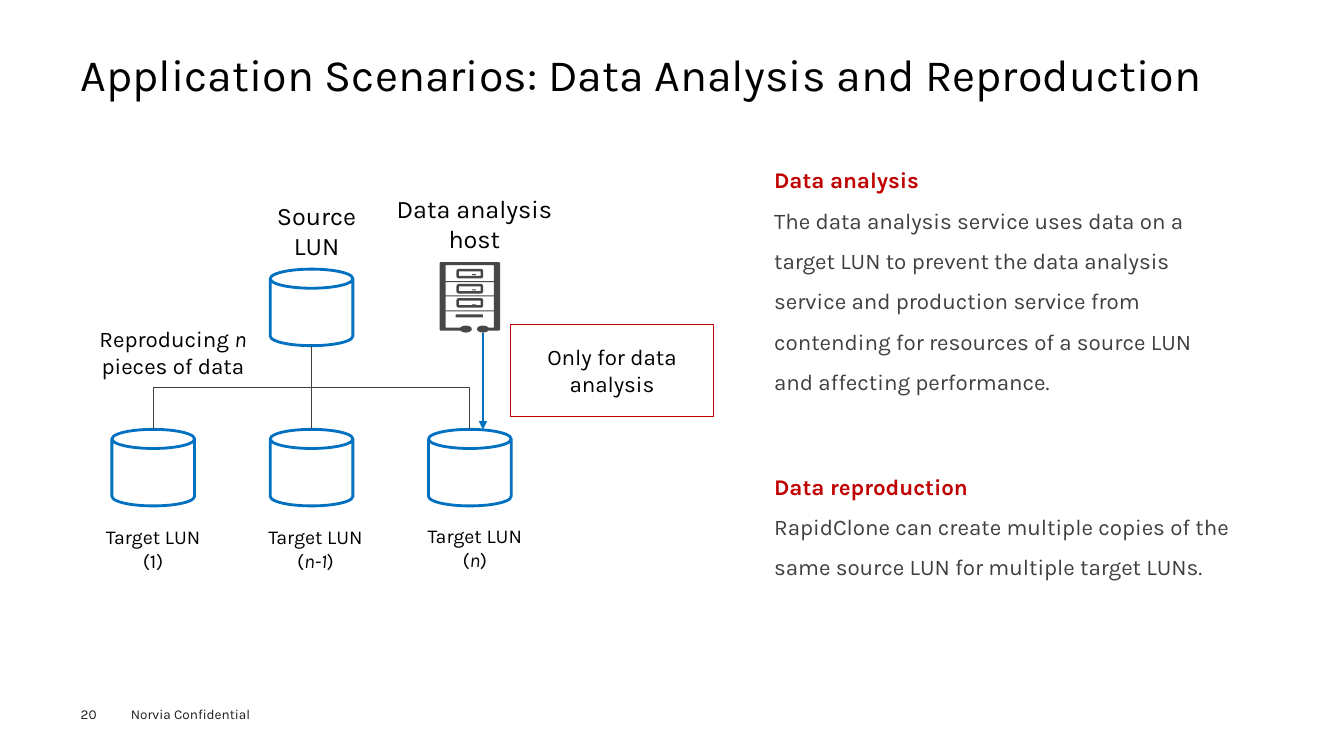
from lxml.etree import SubElement
from pptx import Presentation
from pptx.dml.color import RGBColor
from pptx.enum.shapes import MSO_CONNECTOR, MSO_SHAPE
from pptx.enum.text import MSO_ANCHOR, MSO_AUTO_SIZE, PP_ALIGN
from pptx.oxml.ns import qn
from pptx.util import Emu, Pt

SCALE = 9144  # EMU in one px, 100 px to the inch
COLORS = {
    "black": "000000", "white": "FFFFFF", "blue": "0070C0", "red": "C00000",
    "body": "3D3F43", "icon": "474747", "tree": "404040", "footer": "1D1D1B",
}


def px(length):
    return Emu(length * SCALE)


def color(name):
    return RGBColor.from_string(COLORS[name])


class SlideBuilder:
    font_name = "Karla"

    def __init__(self, slide):
        self.slide = slide

    def fill_text(self, shape, paragraphs, margins=None, anchor=MSO_ANCHOR.TOP,
                  align=PP_ALIGN.LEFT, spacing=None):
        """Each paragraph is a list of (text, font format) runs."""
        frame = shape.text_frame
        settings = {"word_wrap": True, "auto_size": MSO_AUTO_SIZE.NONE,
                    "vertical_anchor": anchor}
        if margins is not None:
            for side in ("left", "top", "right", "bottom"):
                settings[f"margin_{side}"] = px(margins)
        for name, value in settings.items():
            setattr(frame, name, value)
        for index, runs in enumerate(paragraphs):
            paragraph = frame.add_paragraph() if index else frame.paragraphs[0]
            paragraph.alignment = align
            if spacing:
                paragraph.line_spacing = spacing
            for text, font_format in runs:
                run = paragraph.add_run()
                run.text = text
                values = {"name": self.font_name, **font_format}
                run.font.color.rgb = color(values.pop("color", "black"))
                for name, value in values.items():
                    setattr(run.font, name, value)

    def title(self, text, box, size):
        shape = self.slide.shapes.title
        for name, value in zip(("left", "top", "width", "height"), box):
            setattr(shape, name, px(value))
        self.fill_text(shape, [[(text, {"size": Pt(size)})]], margins=0,
                       anchor=MSO_ANCHOR.MIDDLE, spacing=0.9)

    def text(self, paragraphs, box, **layout):
        shape = self.slide.shapes.add_textbox(*map(px, box))
        self.fill_text(shape, paragraphs, **layout)

    def paint(self, shape, fill, line, width):
        shape.shadow.inherit = False
        if fill:
            shape.fill.solid()
            shape.fill.fore_color.rgb = color(fill)
        else:
            shape.fill.background()
        if line:
            shape.line.color.rgb = color(line)
            shape.line.width = Pt(width)
        else:
            shape.line.fill.background()
        return shape

    def shape(self, kind, box, fill=None, line=None, width=0.75):
        shape = self.slide.shapes.add_shape(kind, *map(px, box))
        return self.paint(shape, fill, line, width)

    def outline(self, points, fill):
        builder = self.slide.shapes.build_freeform(*points[0], scale=SCALE)
        builder.add_line_segments(points[1:], close=True)
        return self.paint(builder.convert_to_shape(), fill, None, 0)

    def connector(self, start, end, line, width=0.75, elbow=False, arrow=False):
        kind = MSO_CONNECTOR.ELBOW if elbow else MSO_CONNECTOR.STRAIGHT
        connector = self.slide.shapes.add_connector(kind, *map(px, start + end))
        connector.line.color.rgb = color(line)
        connector.line.width = Pt(width)
        properties = connector._element.spPr
        if elbow:
            properties.find(qn("a:prstGeom")).set("prst", "bentConnector2")
        if arrow:
            SubElement(properties.find(qn("a:ln")), qn("a:tailEnd"), type="triangle")
        SubElement(properties, qn("a:effectLst"))


def draw_host(builder):
    # Cabinet frame, open at the bottom for the cable
    builder.outline([(461, 328), (437, 328), (436, 327), (436, 261), (437, 260),
                     (495, 260), (496, 261), (496, 327), (495, 328), (480, 328),
                     (480, 325), (490, 325), (490, 263), (442, 263), (442, 325),
                     (461, 325)], "icon")
    # Drawers with a handle and a shelf below
    for top, handle, shelf in ((267, 272, 279), (282, 287, 293), (296, 302, 308)):
        builder.shape(MSO_SHAPE.ROUNDED_RECTANGLE, (454, top + 1, 24, 7),
                      line="icon", width=1.8)
        builder.shape(MSO_SHAPE.RECTANGLE, (468, handle, 4, 1), fill="icon")
        builder.shape(MSO_SHAPE.RECTANGLE, (439, shelf, 54, 1), fill="icon")
    # Slot and cable plugs
    builder.shape(MSO_SHAPE.ROUNDED_RECTANGLE, (452, 312, 27, 3), fill="icon")
    for left in (456, 473):
        builder.shape(MSO_SHAPE.OVAL, (left, 323, 12, 7), fill="icon")


def main():
    presentation = Presentation()
    presentation.slide_width, presentation.slide_height = px(1333), px(750)
    slide = presentation.slides.add_slide(presentation.slide_layouts[5])
    builder = SlideBuilder(slide)
    center, middle = PP_ALIGN.CENTER, MSO_ANCHOR.MIDDLE

    # Title and footer
    builder.title("Application Scenarios: Data Analysis and Reproduction",
                  (80, 49, 1173, 54), 32)
    footer = {"size": Pt(9.7), "color": "footer"}
    builder.text([[("20", footer)]], (80, 700, 55, 16), margins=0)
    builder.text([[("Norvia Confidential", footer)]], (120, 695, 160, 27))

    # Source and target LUNs, evenly spaced
    source_center, pitch, can_width, can_height = 309, 157, 82, 76
    source_top, target_top, branch = 267, 426, 384
    target_centers = [source_center + step * pitch for step in (-1, 0, 1)]
    cans = [(source_center, source_top)] + [(x, target_top) for x in target_centers]
    for x, top in cans:
        builder.shape(MSO_SHAPE.CAN, (x - can_width // 2, top, can_width, can_height),
                      fill="white", line="blue", width=2)

    # Data analysis host
    draw_host(builder)

    # Tree lines and host arrow
    builder.connector((source_center, source_top + can_height),
                      (source_center, target_top), "tree")
    for x in (target_centers[0], target_centers[-1]):
        builder.connector((source_center, branch), (x, target_top), "tree", elbow=True)
    builder.connector((479, 330), (479, target_top), "blue", width=1.5, arrow=True)

    # Diagram labels
    large, medium, small = ({"size": Pt(size)} for size in (18, 16, 14))
    builder.text([[("Reproducing ", medium), ("n", {**medium, "italic": True}),
                   (" pieces of data", medium)]], (79, 318, 185, 91), align=center)
    targets = ((152, 516, "1", False), (313, 516, "n-1", True), (471, 515, "n", True))
    for x, top, number, italic in targets:
        builder.text([[("Target LUN (", small), (number, {**small, "italic": italic}),
                       (")", small)]], (x - 60, top, 120, 57), align=center)
    builder.text([[("Source LUN", large)]], (262, 193, 104, 71),
                 anchor=middle, align=center)
    builder.text([[("Data analysis host", large)]], (376, 186, 189, 71),
                 anchor=middle, align=center)
    note = builder.shape(MSO_SHAPE.RECTANGLE, (506, 322, 202, 91), line="red")
    builder.fill_text(note, [[("Only for data analysis", medium)]],
                      anchor=middle, align=center)

    # Explanations
    explanations = (
        ((758, 147, 464, 252), "Data analysis",
         "The data analysis service uses data on a target LUN to prevent the data "
         "analysis service and production service from contending for resources of "
         "a source LUN and affecting performance."),
        ((758, 451, 496, 131), "Data reproduction",
         "RapidClone can create multiple copies of the same source LUN for multiple "
         "target LUNs."),
    )
    for box, heading, body in explanations:
        builder.text([[(heading, {**medium, "color": "red", "bold": True})],
                      [(body, {**medium, "color": "body"})]], box, spacing=1.5)

    presentation.save("out.pptx")


if __name__ == "__main__":
    main()
